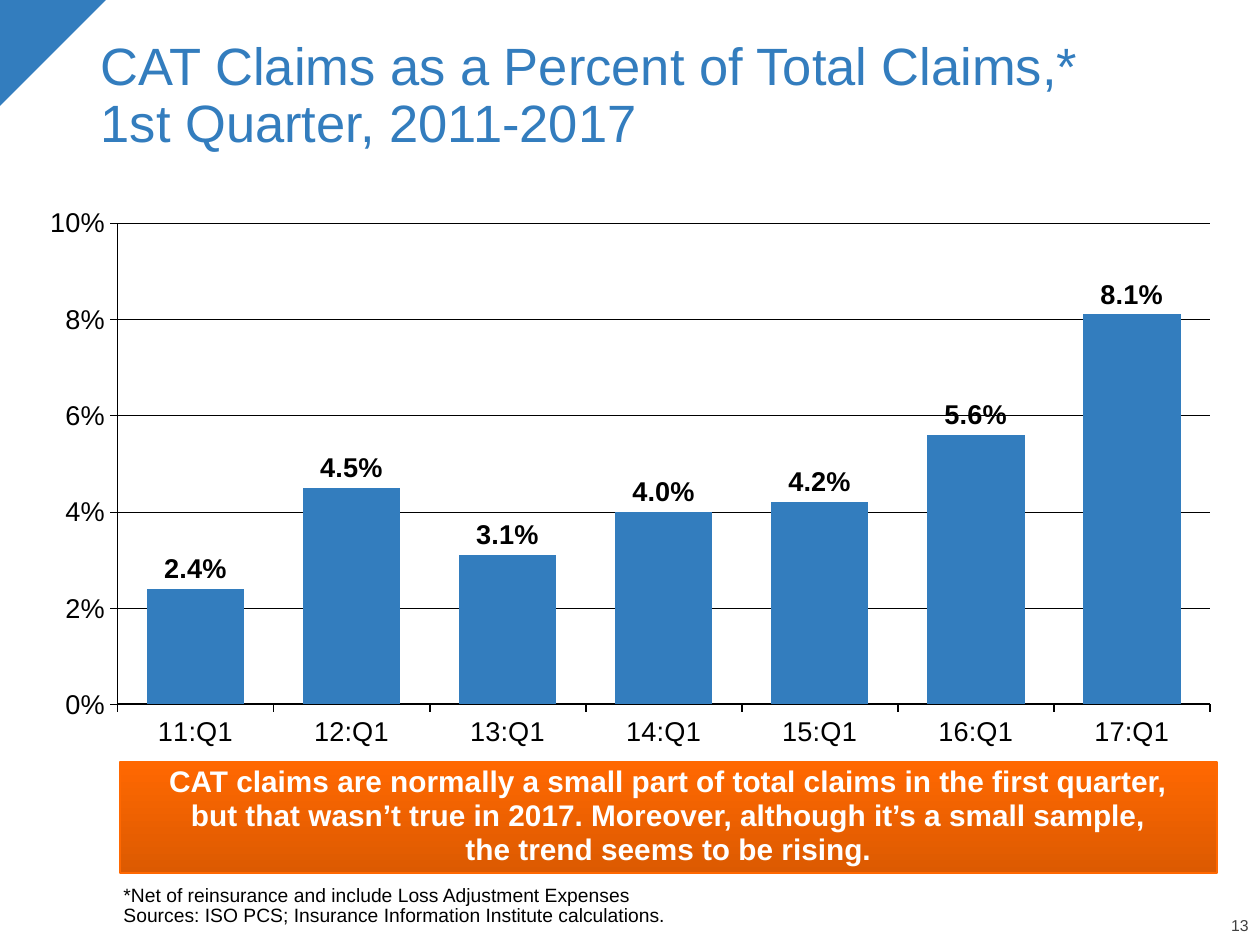
"""Build a slide charting first-quarter CAT claims as a percent of total claims."""
from copy import deepcopy

from lxml import etree
from pptx import Presentation
from pptx.chart.data import CategoryChartData
from pptx.dml.color import RGBColor
from pptx.enum.chart import XL_CHART_TYPE as ChartType, XL_LABEL_POSITION as LabelPosition
from pptx.enum.chart import XL_TICK_MARK as TickMark
from pptx.enum.shapes import MSO_SHAPE as Shape
from pptx.enum.text import MSO_ANCHOR as Anchor, PP_ALIGN as Align
from pptx.oxml.ns import qn
from pptx.util import Inches, Pt

COLORS = {
    name: RGBColor.from_string(value)
    for name, value in {
        "blue": "337DBE", "orange": "FF6801", "dark_orange": "DC5A01",
        "black": "000000", "gray": "404040", "white": "FFFFFF",
    }.items()
}


def format_font(font, size, color="black", bold=False):
    font.name, font.size, font.bold = "Arial", Pt(size), bold
    font.color.rgb = COLORS[color]


def write_text(shape, text, size, color="black", bold=False, align=Align.LEFT,
               anchor=Anchor.BOTTOM, spacing=0.9, insets=(0.1, 0.05, 0.1, 0.05)):
    frame = shape.text_frame
    frame.word_wrap = True
    frame.vertical_anchor = anchor
    frame.margin_left, frame.margin_top, frame.margin_right, frame.margin_bottom = map(Inches, insets)
    paragraph = frame.paragraphs[0]
    paragraph.text = text
    paragraph.alignment, paragraph.line_spacing = align, spacing
    for run in paragraph.runs:
        format_font(run.font, size, color, bold)
    for line_break in paragraph._p.findall(qn("a:br")):
        line_break.insert(0, deepcopy(paragraph.runs[0]._r.rPr))


presentation = Presentation()
presentation.slide_width, presentation.slide_height = Inches(10), Inches(7.5)
slide = presentation.slides.add_slide(presentation.slide_layouts[5])
shapes = slide.shapes

corner = shapes.add_shape(Shape.RIGHT_TRIANGLE, 0, 0, Inches(0.84), Inches(0.84))
corner.rotation = 90
corner.shadow.inherit = False
corner.fill.solid()
corner.fill.fore_color.rgb = COLORS["blue"]
corner.line.fill.background()

page_number = shapes.add_textbox(Inches(9.43), Inches(7.29), Inches(0.48), Inches(0.13))
write_text(page_number, "13", 9, color="gray", align=Align.RIGHT, insets=(0, 0, 0, 0))

title = shapes.title
title.left, title.top, title.width, title.height = map(Inches, (0.7, 0.35, 8.23, 0.92))
write_text(title, "CAT Claims as a Percent of Total Claims,* 1st Quarter, 2011-2017", 30, color="blue")

chart_data = CategoryChartData(number_format="0.0%")
chart_data.categories = [f"{year}:Q1" for year in range(11, 18)]
chart_data.add_series("Series 1", (0.024, 0.045, 0.031, 0.04, 0.042, 0.056, 0.081))
chart = shapes.add_chart(ChartType.COLUMN_CLUSTERED, Inches(0.25), Inches(1.44),
                         Inches(9.36), Inches(4.92), chart_data).chart
chart.has_legend = chart.has_title = False
format_font(chart.font, 15.5)

category_axis, value_axis = chart.category_axis, chart.value_axis
for axis, line_width in ((category_axis, 1.11), (value_axis, 0.28)):
    axis.major_tick_mark, axis.minor_tick_mark = TickMark.OUTSIDE, TickMark.NONE
    axis.format.line.color.rgb = COLORS["black"]
    axis.format.line.width = Pt(line_width)
    format_font(axis.tick_labels.font, 15.5)
value_axis.minimum_scale, value_axis.maximum_scale, value_axis.major_unit = 0, 0.1, 0.02
value_axis.tick_labels.number_format = "0%"
value_axis.tick_labels.number_format_is_linked = False
value_axis.has_major_gridlines = True
value_axis.major_gridlines.format.line.color.rgb = COLORS["black"]
value_axis.major_gridlines.format.line.width = Pt(0.28)

plot = chart.plots[0]
plot.gap_width = 60
plot.vary_by_categories = False
plot.series[0].format.fill.solid()
plot.series[0].format.fill.fore_color.rgb = COLORS["blue"]
labels = plot.series[0].data_labels
labels.show_value = True
labels.position = LabelPosition.OUTSIDE_END
labels.number_format, labels.number_format_is_linked = "0.0%", False
format_font(labels.font, 15.5, bold=True)

plot_area = chart._chartSpace.chart.plotArea
for old_layout in plot_area.findall(qn("c:layout")):
    plot_area.remove(old_layout)
layout = etree.Element(qn("c:layout"))
manual_layout = etree.SubElement(layout, qn("c:manualLayout"))
for tag, value in (("layoutTarget", "inner"), ("xMode", "edge"), ("yMode", "edge"),
                   ("x", "0.073"), ("y", "0.067"), ("w", "0.927"), ("h", "0.777")):
    etree.SubElement(manual_layout, qn(f"c:{tag}")).set("val", value)
plot_area.insert(0, layout)

footnote = shapes.add_textbox(Inches(0.58), Inches(7.03), Inches(7.88), Inches(0.47))
write_text(footnote, "*Net of reinsurance and include Loss Adjustment Expenses\n"
           "Sources: ISO PCS; Insurance Information Institute calculations.",
           11, spacing=0.85, insets=(0.4, 0, 0, 0.15))

callout = shapes.add_shape(Shape.RECTANGLE, Inches(0.95), Inches(6.05), Inches(8.71), Inches(0.88))
callout.shadow.inherit = False
callout.fill.gradient()
callout.fill.gradient_angle = 270
for stop, position, color in zip(callout.fill.gradient_stops, (0, 1), ("orange", "dark_orange")):
    stop.position, stop.color.rgb = position, COLORS[color]
callout.line.color.rgb = COLORS["orange"]
callout.line.width = Pt(1)
write_text(callout, "CAT claims are normally a small part of total claims in the first quarter,\n"
           "but that wasn’t true in 2017. Moreover, although it’s a small sample,\n"
           "the trend seems to be rising.", 17, color="white", bold=True, align=Align.CENTER,
           anchor=Anchor.MIDDLE, spacing=0.95, insets=(0.1, 0.05, 0.1, 0.07))

presentation.save("out.pptx")
